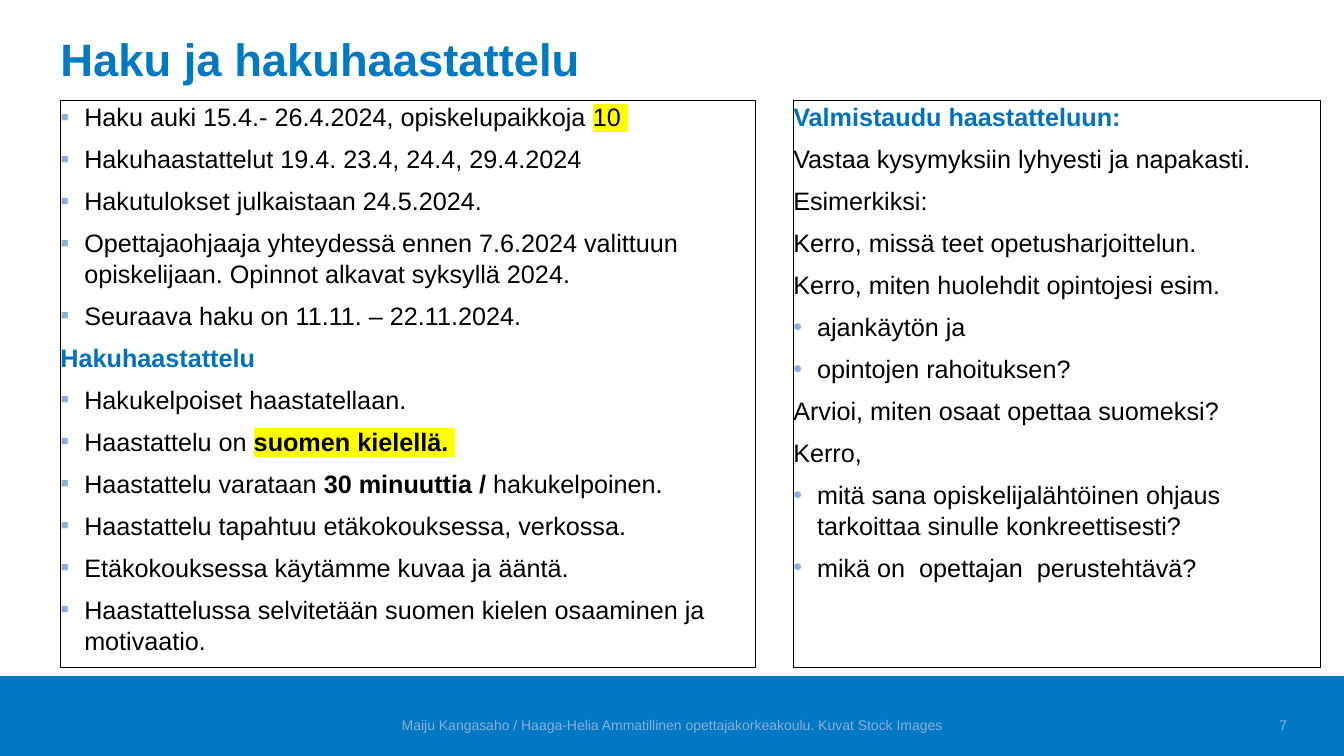
from lxml.etree import SubElement
from pptx import Presentation
from pptx.dml.color import RGBColor
from pptx.enum.shapes import MSO_SHAPE
from pptx.enum.text import MSO_ANCHOR, MSO_AUTO_SIZE, PP_ALIGN
from pptx.oxml.ns import qn
from pptx.util import Pt

COLORS = {
    "brand": "0079C2",
    "heading": "0070C0",
    "soft": "8BADDC",
    "text": "000000",
    "marker": "FFFF00",
}
PANEL_TOP, PANEL_HEIGHT = 72, 404.64
FOOTER_TOP, FOOTER_HEIGHT = 495.36, 28.8

APPLICATION = [
    ("▪", [("Haku auki 15.4.- 26.4.2024, opiskelupaikkoja ", {}),
           ("10 ", {"highlight": "marker"})]),
    ("▪", "Hakuhaastattelut 19.4. 23.4, 24.4, 29.4.2024"),
    ("▪", "Hakutulokset julkaistaan 24.5.2024."),
    ("▪", "Opettajaohjaaja yhteydessä ennen 7.6.2024 valittuun opiskelijaan. "
          "Opinnot alkavat syksyllä 2024."),
    ("▪", "Seuraava haku on 11.11. – 22.11.2024."),
    (None, [("Hakuhaastattelu", {"color": "heading", "bold": True})]),
    ("▪", "Hakukelpoiset haastatellaan."),
    ("▪", [("Haastattelu on ", {}),
           ("suomen kielellä. ", {"bold": True, "highlight": "marker"})]),
    ("▪", [("Haastattelu varataan ", {}),
           ("30 minuuttia / ", {"bold": True}),
           ("hakukelpoinen.", {})]),
    ("▪", "Haastattelu tapahtuu etäkokouksessa, verkossa."),
    ("▪", "Etäkokouksessa käytämme kuvaa ja ääntä."),
    ("▪", "Haastattelussa selvitetään suomen kielen osaaminen ja motivaatio."),
]
PREPARATION = [
    (None, [("Valmistaudu haastatteluun:", {"color": "heading", "bold": True})]),
    (None, "Vastaa kysymyksiin lyhyesti ja napakasti."),
    (None, "Esimerkiksi:"),
    (None, "Kerro, missä teet opetusharjoittelun."),
    (None, "Kerro, miten huolehdit opintojesi esim."),
    ("•", "ajankäytön ja"),
    ("•", "opintojen rahoituksen?"),
    (None, "Arvioi, miten osaat opettaa suomeksi?"),
    (None, "Kerro,"),
    ("•", "mitä sana opiskelijalähtöinen ohjaus tarkoittaa sinulle konkreettisesti?"),
    ("•", "mikä on  opettajan  perustehtävä?"),
]


def add_text(paragraph, text, size=18, color="text", bold=False, highlight=None):
    """Add one formatted run to a paragraph."""
    run = paragraph.add_run()
    run.text = text
    run.font.size = Pt(size)
    run.font.bold = bold
    run.font.color.rgb = RGBColor.from_string(COLORS[color])
    run.font.name = "Arial"
    if highlight:
        properties = run.font._element
        marker = SubElement(properties, qn("a:highlight"))
        SubElement(marker, qn("a:srgbClr"), val=COLORS[highlight])
        properties.find(qn("a:solidFill")).addnext(marker)


class SlideBuilder:
    """Hold the style and the current slide."""

    def __init__(self, presentation):
        """Add a title-only slide."""
        self.slide = presentation.slides.add_slide(presentation.slide_layouts[5])

    def prepare_frame(self, shape, bottom=0, anchor=MSO_ANCHOR.TOP):
        """Set the margins and wrapping of a shape and return its text frame."""
        frame = shape.text_frame
        frame.margin_left = frame.margin_top = frame.margin_right = 0
        frame.margin_bottom = Pt(bottom)
        frame.word_wrap = True
        frame.auto_size = MSO_AUTO_SIZE.NONE
        frame.vertical_anchor = anchor
        return frame

    def title(self, text):
        """Place and format the slide title."""
        shape = self.slide.shapes.title
        shape.left, shape.top = Pt(43.2), Pt(22.32)
        shape.width, shape.height = Pt(876.24), Pt(38.16)
        paragraph = self.prepare_frame(shape, bottom=3).paragraphs[0]
        paragraph.alignment = PP_ALIGN.LEFT
        paragraph.line_spacing = Pt(39)
        add_text(paragraph, text, size=32.4, color="brand", bold=True)

    def band(self, top, width, height):
        """Draw the coloured band along the bottom."""
        shape = self.slide.shapes.add_shape(
            MSO_SHAPE.RECTANGLE, 0, Pt(top), Pt(width), Pt(height))
        shape.shadow.inherit = False
        shape.fill.solid()
        shape.fill.fore_color.rgb = RGBColor.from_string(COLORS["brand"])
        shape.line.fill.background()

    def panel(self, left, width, items):
        """Draw an outlined box with plain and bulleted paragraphs."""
        shape = self.slide.shapes.add_textbox(
            Pt(left), Pt(PANEL_TOP), Pt(width), Pt(PANEL_HEIGHT))
        shape.line.color.rgb = RGBColor.from_string(COLORS["text"])
        shape.line.width = Pt(0.75)
        frame = self.prepare_frame(shape, bottom=3)
        for index, (bullet, content) in enumerate(items):
            paragraph = frame.add_paragraph() if index else frame.paragraphs[0]
            if bullet:
                self.bullet(paragraph, bullet)
            paragraph.line_spacing = Pt(22)
            if index:
                paragraph.space_before = Pt(8)
            runs = [(content, {})] if isinstance(content, str) else content
            for text, style in runs:
                add_text(paragraph, text, **style)

    def bullet(self, paragraph, character):
        """Give a paragraph a coloured bullet and a hanging indent."""
        properties = paragraph._p.get_or_add_pPr()
        indent = Pt(17)
        properties.set("marL", str(indent))
        properties.set("indent", str(-indent))
        color = SubElement(properties, qn("a:buClr"))
        SubElement(color, qn("a:srgbClr"), val=COLORS["soft"])
        SubElement(properties, qn("a:buFont"), typeface="Arial")
        SubElement(properties, qn("a:buChar"), char=character)

    def footer(self, left, width, text, alignment):
        """Add a small text on the bottom band."""
        shape = self.slide.shapes.add_textbox(
            Pt(left), Pt(FOOTER_TOP), Pt(width), Pt(FOOTER_HEIGHT))
        paragraph = self.prepare_frame(shape, anchor=MSO_ANCHOR.BOTTOM).paragraphs[0]
        paragraph.alignment = alignment
        add_text(paragraph, text, size=10, color="soft")


def main():
    """Build and save the presentation."""
    presentation = Presentation()
    presentation.slide_width, presentation.slide_height = Pt(960), Pt(540)
    builder = SlideBuilder(presentation)
    builder.band(483, 960, 57)
    builder.title("Haku ja hakuhaastattelu")
    builder.panel(43.2, 496.8, APPLICATION)
    builder.footer(190.08, 579.6, "Maiju Kangasaho / Haaga-Helia Ammatillinen "
                   "opettajakorkeakoulu. Kuvat Stock Images", PP_ALIGN.CENTER)
    builder.footer(676.08, 243.36, "7", PP_ALIGN.RIGHT)
    builder.panel(566.64, 376.56, PREPARATION)
    presentation.save("out.pptx")


if __name__ == "__main__":
    main()
